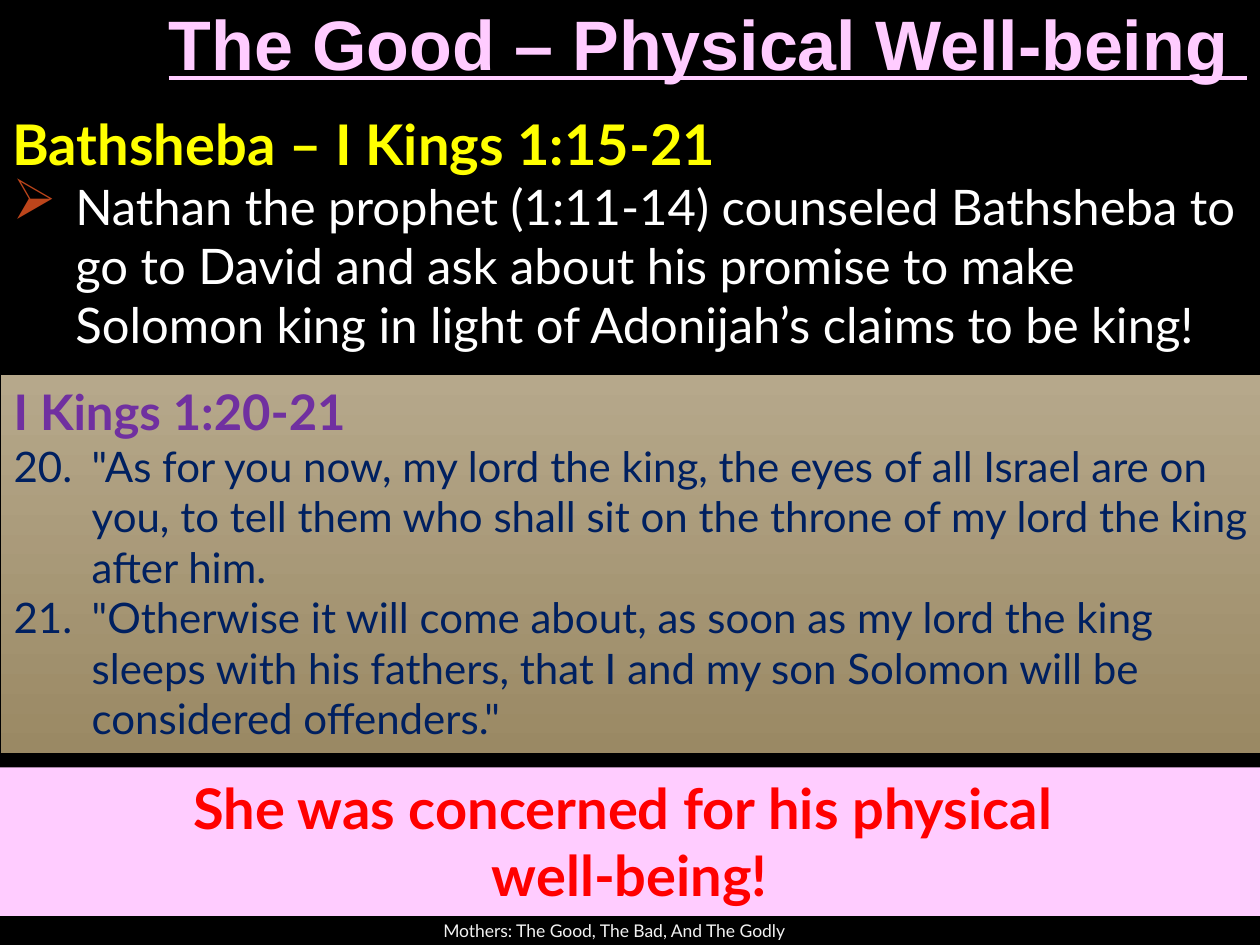
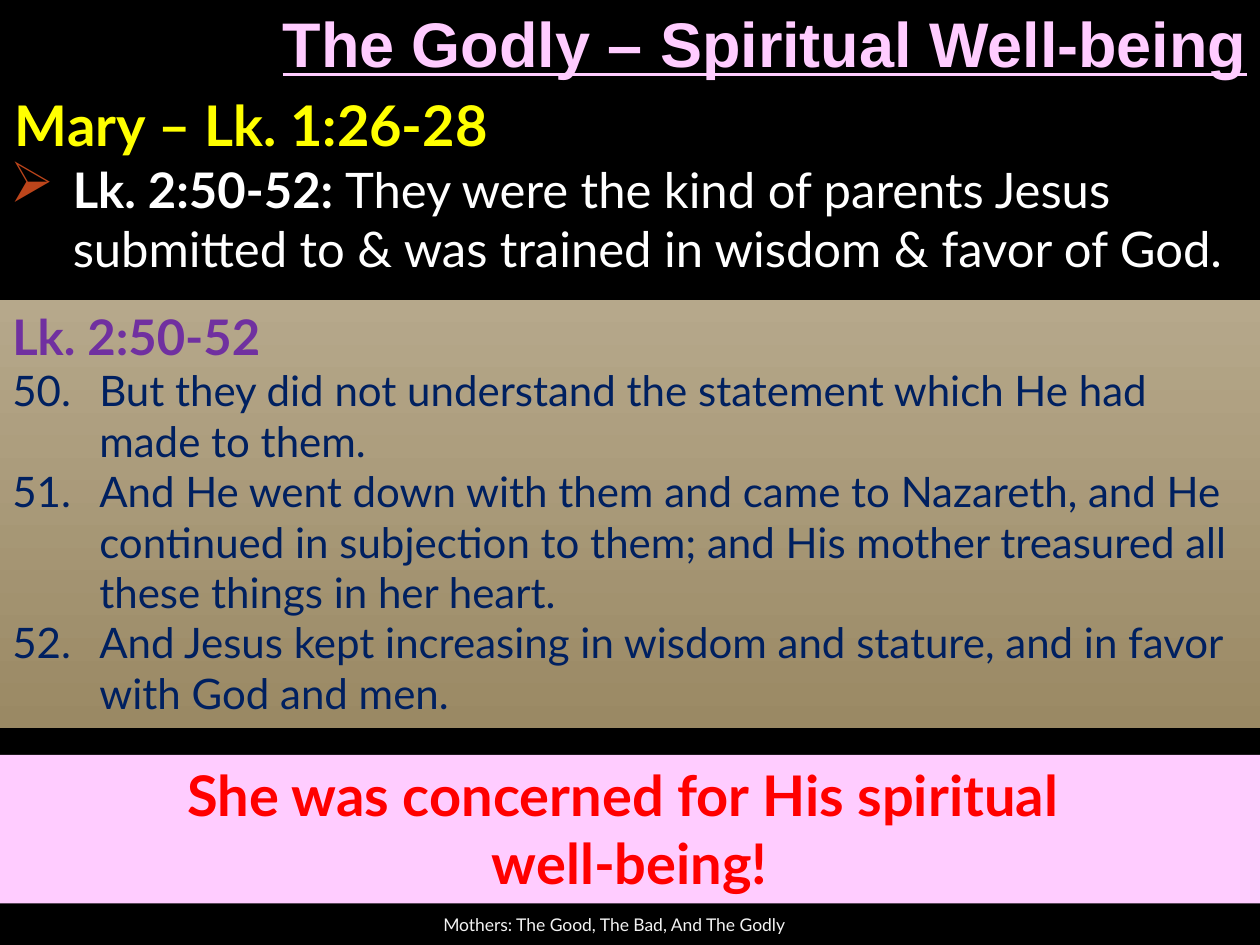
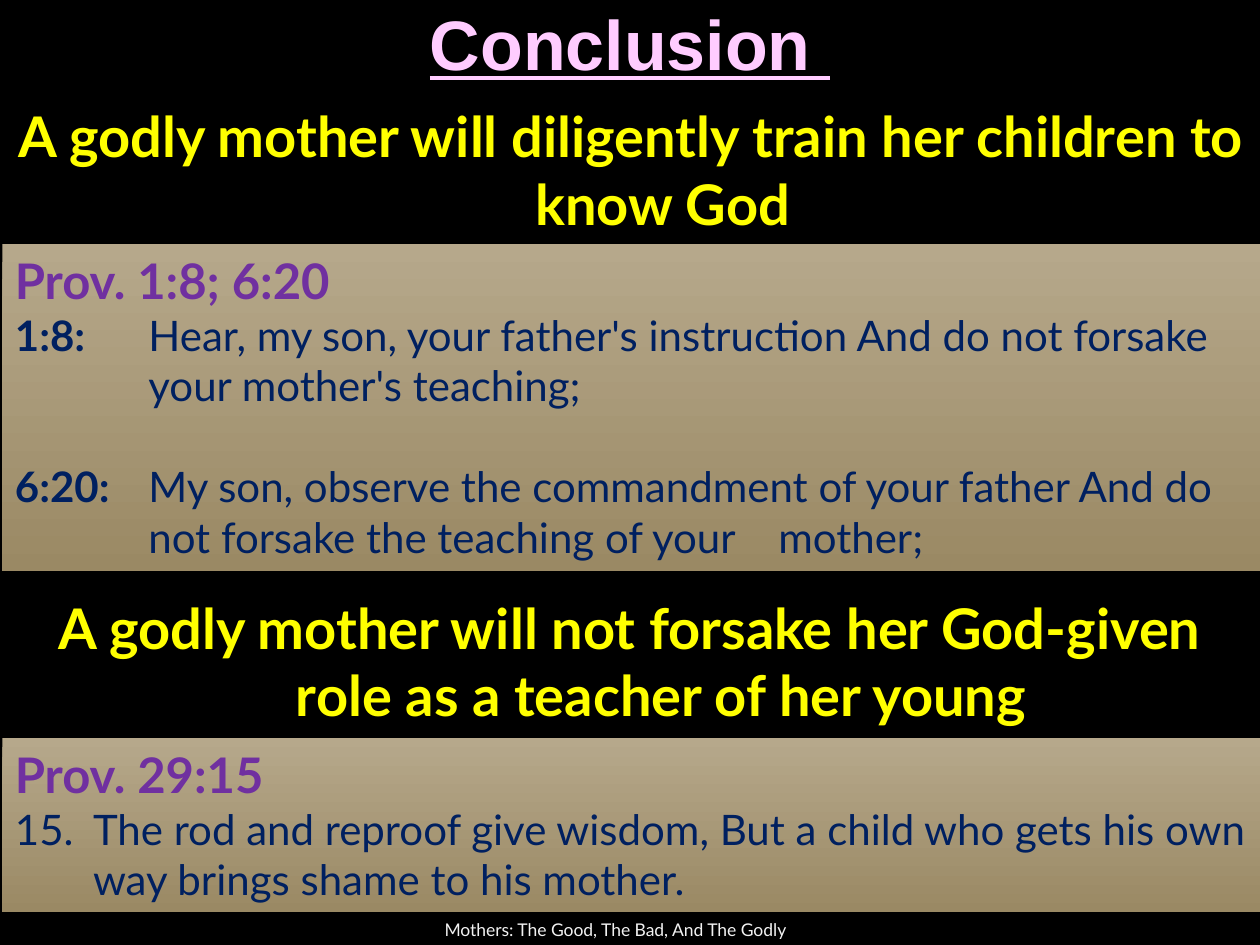
from lxml import etree
from pptx import Presentation
from pptx.dml.color import RGBColor
from pptx.enum.shapes import MSO_SHAPE
from pptx.enum.text import MSO_ANCHOR, MSO_AUTO_SIZE, PP_ALIGN
from pptx.oxml.ns import qn
from pptx.util import Inches, Pt

LEFT, CENTER, RIGHT = PP_ALIGN.LEFT, PP_ALIGN.CENTER, PP_ALIGN.RIGHT
TOP, MIDDLE = MSO_ANCHOR.TOP, MSO_ANCHOR.MIDDLE
GROW, FIXED = MSO_AUTO_SIZE.SHAPE_TO_FIT_TEXT, MSO_AUTO_SIZE.NONE
RECTANGLE = MSO_SHAPE.RECTANGLE

# Content: a block is (band, left, top, height, paragraphs),
# a paragraph is (style, hanging indent, label, body)
FOOTER = "Mothers: The Good, The Bad, And The Godly"
SLIDES = [
    {
        "title": ("The Good – Physical Well-being ", 40, RIGHT),
        "footer": (3.42, 7.27, 0.23),
        "blocks": [
            (None, 0, 0.82, 2.05, [
                ("heading", 0.5, "Bathsheba – I Kings 1:15-21", ""),
                ("point", 0.5, "", "Nathan the prophet (1:11-14) counseled Bathsheba to go to "
                 "David and ask about his promise to make Solomon king in light of Adonijah’s "
                 "claims to be king!"),
            ]),
            ("scripture", 0.01, 2.98, 3, [
                ("reference", 0.5, "I Kings 1:20-21", ""),
                ("verse", 0.62, "20.\t", "\"As for you now, my lord the king, the eyes of all "
                 "Israel are on you, to tell them who shall sit on the throne of my lord the "
                 "king after him."),
                ("verse", 0.62, "21.\t", "\"Otherwise it will come about, as soon as my lord "
                 "the king sleeps with his fathers, that I and my son Solomon will be "
                 "considered offenders.\""),
            ]),
            ("lesson", 0, 6.09, 1.18, [
                ("lesson", 0.5, "She was concerned for his physical ", ""),
                ("lesson", 0.5, "well-being!", ""),
            ]),
        ],
    },
    {
        "title": ("The Godly – Spiritual Well-being", 36, RIGHT),
        "footer": (3.42, 7.17, 0.33),
        "blocks": [
            (None, 0.02, 0.67, 0.64, [("heading", 0.5, "Mary – Lk. 1:26-28", "")]),
            (None, -0.02, 1.22, 1.04, [
                ("point", 0.5, "Lk. 2:50-52: ", "They were the kind of parents Jesus submitted "
                 "to & was trained in wisdom & favor of God."),
            ]),
            ("scripture", 0, 2.38, 3.4, [
                ("reference", 0.5, "Lk. 2:50-52", ""),
                ("verse", 0.69, "50.\t", "But they did not understand the statement which He "
                 "had made to them."),
                ("verse", 0.69, "51.\t", "And He went down with them and came to Nazareth, and "
                 "He continued in subjection to them; and His mother treasured all these "
                 "things in her heart."),
                ("verse", 0.69, "52.\t", "And Jesus kept increasing in wisdom and stature, and "
                 "in favor with God and men."),
            ]),
            ("lesson", 0, 5.99, 1.18, [
                ("lesson", 0.5, "She was concerned for His spiritual ", ""),
                ("lesson", 0.5, "well-being!", ""),
            ]),
        ],
    },
    {
        "title": ("Conclusion ", 40, CENTER),
        "footer": (3.43, 7.25, 0.25),
        "blocks": [
            (None, 0.01, 0.76, 1.18, [
                ("claim", 0.5, "A godly mother will diligently train her children to know God",
                 ""),
            ]),
            ("scripture", 0.02, 1.94, 2.59, [
                ("reference", 0.5, "Prov. 1:8; 6:20", ""),
                ("cited", 1.06, "1:8:\t", "Hear, my son, your father's instruction And do not "
                 "forsake your mother's teaching;"),
                ("cited_apart", 1.06, "6:20:\t", "My son, observe the commandment of your "
                 "father And do not forsake the teaching of your\tmother;"),
            ]),
            (None, 0, 4.66, 1.18, [
                ("claim", 0.5, "A godly mother will not forsake her God-given role as a teacher "
                 "of her young", ""),
            ]),
            ("scripture", 0.02, 5.86, 1.38, [
                ("reference", 0.5, "Prov. 29:15", ""),
                ("verse", 0.62, "15.\t", "The rod and reproof give wisdom, But a child who gets "
                 "his own way brings shame to his mother."),
            ]),
        ],
    },
]

# Theme
WIDTH, HEIGHT = 10, 7.5
TITLE_HEIGHT, FOOTER_WIDTH = 0.67, 3.17
BACKGROUND = "000000"
HEADING = {"size": 32, "color": "FFFF00", "bold": True}
VERSE = {"size": 24, "color": "002060"}
THEME = {
    "bands": {"scripture": ("B6A88B", "9A8964"), "lesson": ("FFCCFF",)},
    "bullet": {"char": "➢", "color": "BC451B", "percent": 115},
    "styles": {
        "title": {"font": "Arial", "color": "FFCCFF", "bold": True, "underline": True},
        "footer": {"size": 10, "color": "F2F2F2"},
        "heading": HEADING,
        "claim": {**HEADING, "align": CENTER},
        "lesson": {**HEADING, "color": "FF0000", "align": CENTER},
        "point": {"size": 28, "color": "FFFFFF", "bold": True, "bullet": True},
        "reference": {"size": 28, "color": "7030A0", "bold": True},
        "verse": VERSE,
        "cited": {**VERSE, "bold": True},
        "cited_apart": {**VERSE, "bold": True, "before": 28.8},
    },
}


def add_bullet(properties):
    bullet = THEME["bullet"]
    color = etree.SubElement(properties, qn("a:buClr"))
    etree.SubElement(color, qn("a:srgbClr"), val=bullet["color"])
    etree.SubElement(properties, qn("a:buSzPct"), val=str(bullet["percent"] * 1000))
    etree.SubElement(properties, qn("a:buChar"), char=bullet["char"])


def write_paragraph(paragraph, style, hang, label, body):
    paragraph.alignment = style.get("align", LEFT)
    paragraph.space_before = Pt(style.get("before", 0))
    properties = paragraph._p.get_or_add_pPr()
    if hang:
        properties.set("marL", str(Inches(hang)))
        properties.set("indent", str(-Inches(hang)))
    if style.get("bullet"):
        add_bullet(properties)
    for text, bold in ((label, style.get("bold", False)), (body, False)):
        if not text:
            continue
        run = paragraph.add_run()
        run.text = text
        formats = {"name": style.get("font", "Lato"), "size": Pt(style["size"]),
                   "bold": bold, "underline": style.get("underline", False)}
        for attribute, value in formats.items():
            setattr(run.font, attribute, value)
        run.font.color.rgb = RGBColor.from_string(style["color"])


def fill_band(shape, colors):
    shape.shadow.inherit = False
    shape.line.fill.background()
    if len(colors) == 1:
        shape.fill.solid()
        shape.fill.fore_color.rgb = RGBColor.from_string(colors[0])
        return
    shape.fill.gradient()
    shape.fill.gradient_angle = 270
    for stop, color in zip(shape.fill.gradient_stops, colors):
        stop.color.rgb = RGBColor.from_string(color)


def add_block(slide, box, paragraphs, band=None, anchor=TOP, fit=GROW):
    place = [Inches(length) for length in box]
    if band:
        shape = slide.shapes.add_shape(RECTANGLE, *place)
        fill_band(shape, THEME["bands"][band])
    else:
        shape = slide.shapes.add_textbox(*place)
    frame = shape.text_frame
    for attribute, value in {"word_wrap": True, "auto_size": fit,
                             "vertical_anchor": anchor}.items():
        setattr(frame, attribute, value)
    for index, (style, *parts) in enumerate(paragraphs):
        paragraph = frame.add_paragraph() if index else frame.paragraphs[0]
        style = THEME["styles"][style] if isinstance(style, str) else style
        write_paragraph(paragraph, style, *parts)


def build_slide(deck, content):
    slide = deck.slides.add_slide(deck.slide_layouts[6])
    slide.background.fill.solid()
    slide.background.fill.fore_color.rgb = RGBColor.from_string(BACKGROUND)

    # Title and footer
    title, size, align = content["title"]
    title_style = {**THEME["styles"]["title"], "size": size, "align": align}
    add_block(slide, (0, 0, WIDTH, TITLE_HEIGHT), [(title_style, 0, title, "")],
              anchor=MIDDLE, fit=FIXED)
    left, top, height = content["footer"]
    add_block(slide, (left, top, FOOTER_WIDTH, height), [("footer", 0, FOOTER, "")],
              anchor=MIDDLE, fit=FIXED)

    # Points, scripture and lesson
    for band, left, top, height, paragraphs in content["blocks"]:
        add_block(slide, (left, top, WIDTH, height), paragraphs, band)


def main():
    deck = Presentation()
    deck.slide_width, deck.slide_height = Inches(WIDTH), Inches(HEIGHT)
    for content in SLIDES:
        build_slide(deck, content)
    deck.save("out.pptx")


if __name__ == "__main__":
    main()
